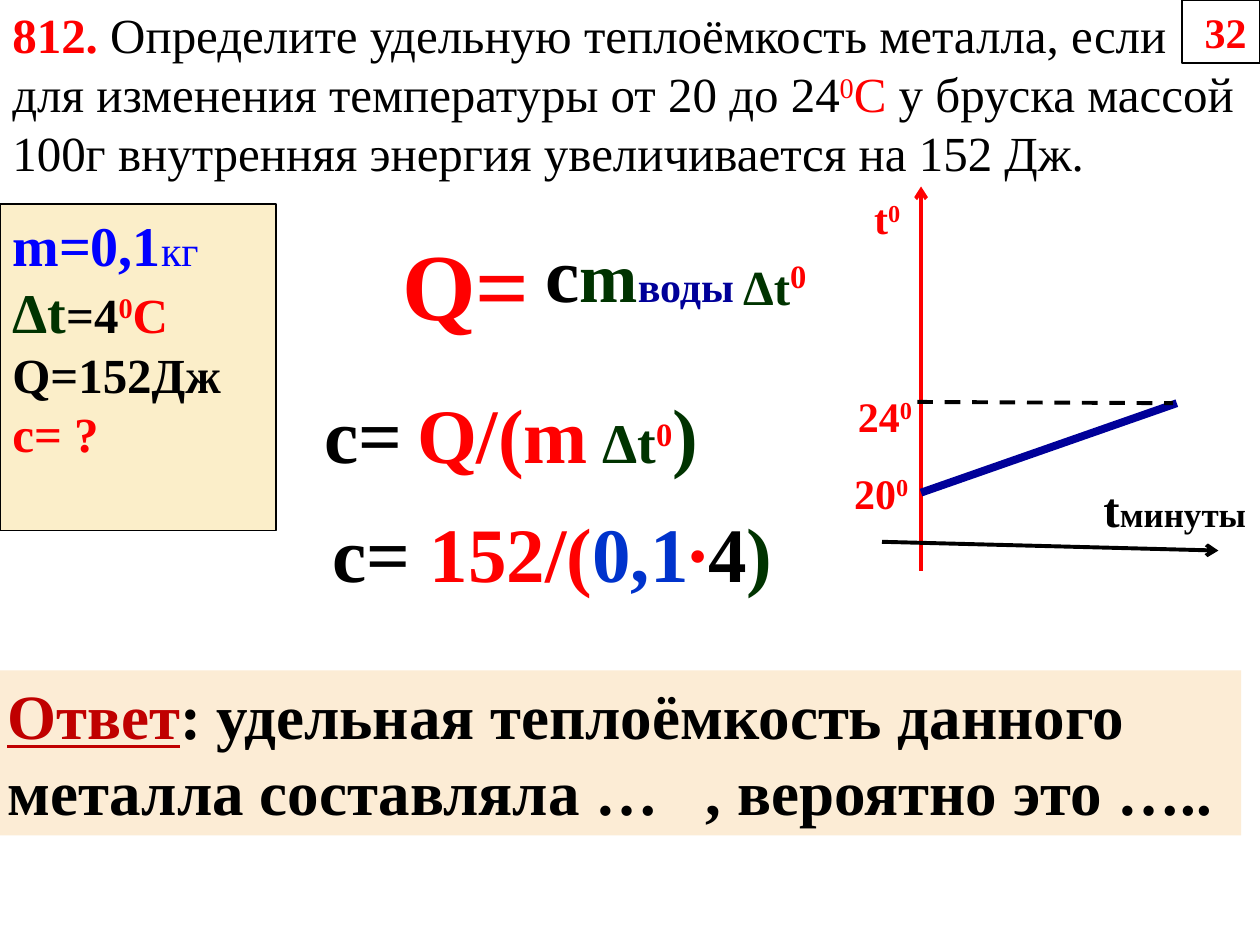
import pptx
import pptx.util
import pptx.dml.color
import pptx.enum.dml
import pptx.enum.shapes
import pptx.enum.text
import pptx.oxml
import pptx.oxml.ns

RGBColor = pptx.dml.color.RGBColor
PP_ALIGN = pptx.enum.text.PP_ALIGN
MSO_ANCHOR = pptx.enum.text.MSO_ANCHOR

BLACK = RGBColor(0, 0, 0)
WHITE = RGBColor(255, 255, 255)
RED = RGBColor(255, 0, 0)
DARK_RED = RGBColor(192, 0, 0)
BLUE = RGBColor(0, 0, 255)
MID_BLUE = RGBColor(0, 51, 204)
NAVY = RGBColor(0, 0, 153)
GREEN = RGBColor(0, 51, 0)
CREAM = RGBColor(0xFB, 0xEE, 0xC9)
PEACH = RGBColor(0xFC, 0xEC, 0xD5)

COLUMNS, ROWS = 100, 75


def run(text, size=28, color=BLACK, bold=True, underline=False, raised=False):
    return dict(text=text, size=size, color=color, bold=bold,
                underline=underline, raised=raised)


class Board:
    font = "Times New Roman"

    def __init__(self, prs):
        self.s = prs.slides.add_slide(prs.slide_layouts[6])
        self.col = prs.slide_width / COLUMNS
        self.row = prs.slide_height / ROWS

    def place(self, x, y, w, h):
        return [round(v) for v in (x * self.col, y * self.row, w * self.col, h * self.row)]

    def fill_text(self, sp, paragraphs, wrap=True, align=PP_ALIGN.LEFT, anchor=MSO_ANCHOR.TOP):
        tf = sp.text_frame
        tf.word_wrap = wrap
        tf.vertical_anchor = anchor
        for i, runs in enumerate(paragraphs):
            p = tf.paragraphs[0] if i == 0 else tf.add_paragraph()
            p.alignment = align
            for item in runs:
                r = p.add_run()
                r.text = item["text"]
                r.font.name = self.font
                r.font.size = pptx.util.Pt(item["size"])
                r.font.color.rgb = item["color"]
                r.font.bold = item["bold"]
                r.font.underline = item["underline"]
                if item["raised"]:
                    r.font._element.set("baseline", "30000")

    def text(self, box, *runs, **layout):
        self.fill_text(self.s.shapes.add_textbox(*self.place(*box)), [runs], **layout)

    def panel(self, box, fill, paragraphs, outlined=True):
        sp = self.s.shapes.add_shape(pptx.enum.shapes.MSO_SHAPE.RECTANGLE, *self.place(*box))
        sp.shadow.inherit = False
        sp.fill.solid()
        sp.fill.fore_color.rgb = fill
        if outlined:
            sp.line.color.rgb = BLACK
            sp.line.width = pptx.util.Pt(0.75)
        else:
            sp.line.fill.background()
        self.fill_text(sp, paragraphs)

    def line(self, start, end, color, width=2.25, arrow=False, dashed=False):
        c = self.s.shapes.add_connector(pptx.enum.shapes.MSO_CONNECTOR.STRAIGHT,
                                        *self.place(*start, *end))
        c.line.color.rgb = color
        c.line.width = pptx.util.Pt(width)
        if dashed:
            c.line.dash_style = pptx.enum.dml.MSO_LINE.DASH
        if arrow:
            c.line._get_or_add_ln().append(pptx.oxml.parse_xml(
                f'<a:tailEnd {pptx.oxml.ns.nsdecls("a")} type="arrow"/>'))
        c._element.spPr.append(pptx.oxml.parse_xml(
            f'<a:effectLst {pptx.oxml.ns.nsdecls("a")}/>'))


def main():
    prs = pptx.Presentation()
    prs.slide_width = pptx.util.Inches(10)
    prs.slide_height = pptx.util.Inches(7.5)
    board = Board(prs)

    board.text((0, -0.1, 100, 15.1),
               run("812. ", color=RED),
               run("Определите удельную теплоёмкость металла, если для изменения "
                   "температуры от 20 до 24", bold=False),
               run("0", color=RED, bold=False, raised=True),
               run("С", color=RED, bold=False),
               run(" у бруска массой 100г внутренняя энергия увеличивается на 152 Дж.",
                   bold=False))

    board.panel((0, 16.2, 21.9, 25.9), CREAM, [
        [run("m=0,1", 32, BLUE), run("кг", 24, BLUE, bold=False)],
        [run("Δt", 32, GREEN), run("=4"), run("0", color=RED, raised=True),
         run("С", color=RED)],
        [run("Q=152Дж")],
        [run("с= ?", color=RED)],
    ])

    board.line((73.1, 45.3), (73.1, 14.8), RED, arrow=True)
    board.line((70, 43), (96.7, 43.7), BLACK, arrow=True)
    board.line((73.1, 39.1), (93.4, 32), NAVY, width=4.5)
    board.line((72.8, 31.9), (93.1, 32), BLACK, dashed=True)

    for box, label in (((68.4, 14.8, 4.3, 5), "t"),
                       ((66.8, 36.6, 6.5, 5), "20"),
                       ((67.1, 30.5, 6.5, 5), "24")):
        board.text(box, run(label, 24, RED), run("0", 24, RED, raised=True), wrap=False)
    board.text((86.6, 37.5, 13.4, 5.7), run("t"), run("минуты", 20), wrap=False)

    board.text((30.3, 17.4, 13.4, 10.1), run("Q= ", 54, RED),
               align=PP_ALIGN.CENTER, anchor=MSO_ANCHOR.MIDDLE)
    board.text((42.3, 17.4, 20.3, 8.4),
               run("с", 44), run("m", 40, GREEN), run("воды", 24, NAVY))
    board.text((58, 19.3, 10.4, 11.8),
               run("Δt", 28, GREEN), run("0", 32, RED, raised=True))
    board.text((24.8, 30.2, 37.9, 8.4),
               run("с=", 44), run(" ", 32, RED), run("Q/(m", 44, RED),
               run(" Δt", 32, GREEN), run("0", 32, RED, raised=True), run(")", 44, GREEN))
    board.text((25.4, 39.6, 37.9, 8.4),
               run("с= ", 44), run("152/(", 44, RED), run("0,1", 44, MID_BLUE),
               run("∙", 44, RED), run("4", 44), run(")", 44, GREEN))

    board.panel((-0.4, 53.2, 98.9, 13.1), PEACH, [[
        run("Ответ", 36, DARK_RED, underline=True),
        run(": удельная теплоёмкость данного металла составляла …   , вероятно это …..", 36),
    ]], outlined=False)
    board.panel((93.8, 0, 6.2, 5), WHITE, [[run(" 32", 24, RED)]])

    prs.save("out.pptx")


if __name__ == "__main__":
    main()
